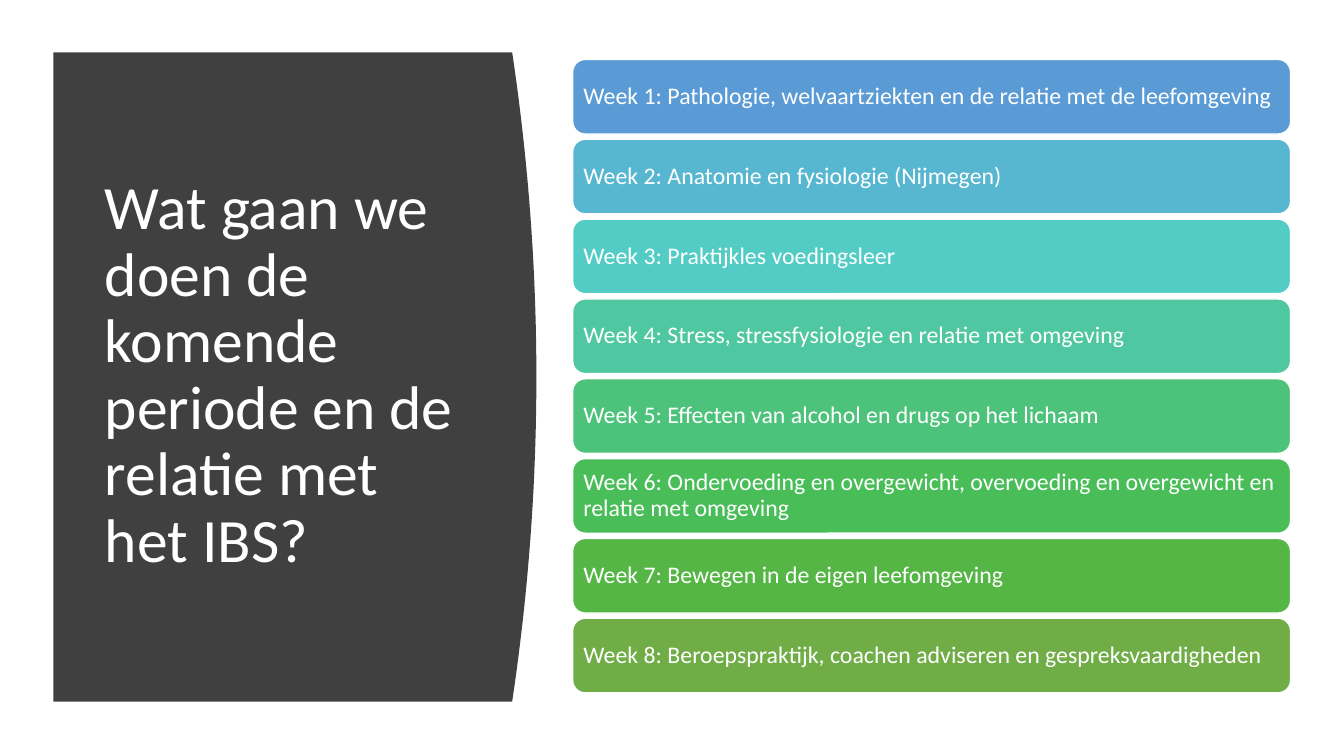
from pptx import Presentation
from pptx.dml.color import RGBColor
from pptx.enum.shapes import MSO_SHAPE
from pptx.enum.text import MSO_ANCHOR, MSO_AUTO_SIZE, PP_ALIGN
from pptx.util import Inches, Pt

FONT = "Calibri"
WHITE = RGBColor(0xFF, 0xFF, 0xFF)
DARK = RGBColor(0x40, 0x40, 0x40)

TITLE = "Wat gaan we doen de komende periode en de relatie met het IBS?"
WEEKS = [
    ("Pathologie, welvaartziekten en de relatie met de leefomgeving",
     RGBColor(0x5B, 0x9B, 0xD5)),
    ("Anatomie en fysiologie (Nijmegen)", RGBColor(0x57, 0xB7, 0xD1)),
    ("Praktijkles voedingsleer", RGBColor(0x53, 0xCC, 0xC5)),
    ("Stress, stressfysiologie en relatie met omgeving",
     RGBColor(0x4F, 0xC7, 0xA0)),
    ("Effecten van alcohol en drugs op het lichaam",
     RGBColor(0x4C, 0xC2, 0x7B)),
    ("Ondervoeding en overgewicht, overvoeding en overgewicht en "
     "relatie met omgeving", RGBColor(0x48, 0xBD, 0x58)),
    ("Bewegen in de eigen leefomgeving", RGBColor(0x55, 0xB6, 0x46)),
    ("Beroepspraktijk, coachen adviseren en gespreksvaardigheden",
     RGBColor(0x70, 0xAD, 0x47)),
]

LEFT, TOP, BOTTOM = 0.53, 0.52, 6.96
EDGE, BULGE, STEPS = 5.08, 0.24, 40
BAR_TOP, BAR_STEP = 0.59, 0.792


def write(shape, text, size):
    """Put one left-aligned, vertically centred white paragraph in a shape."""
    frame = shape.text_frame
    frame.text = text
    frame.word_wrap = True
    frame.auto_size = MSO_AUTO_SIZE.NONE
    frame.vertical_anchor = MSO_ANCHOR.MIDDLE
    par = frame.paragraphs[0]
    par.alignment = PP_ALIGN.LEFT
    par.line_spacing = 0.9
    par.font.name = FONT
    par.font.size = Pt(size)
    par.font.color.rgb = WHITE


def add_panel(slide):
    """Draw the dark panel, whose right side is a shallow parabola."""
    curve = []
    for i in range(STEPS + 1):
        t = i / STEPS
        x = EDGE + BULGE * (1 - (2 * t - 1) ** 2)
        curve.append((Inches(x), Inches(TOP + t * (BOTTOM - TOP))))
    pen = slide.shapes.build_freeform(Inches(LEFT), Inches(TOP))
    pen.add_line_segments(curve + [(Inches(LEFT), Inches(BOTTOM))])
    panel = pen.convert_to_shape()
    panel.shadow.inherit = False
    panel.fill.solid()
    panel.fill.fore_color.rgb = DARK
    panel.line.fill.background()
    return panel


def set_title(slide, panel):
    title = slide.shapes.title
    title.left, title.top = Inches(0.94), Inches(1.11)
    title.width, title.height = Inches(3.74), Inches(5.24)
    write(title, TITLE, 44)
    panel._element.addnext(title._element)


def add_bar(slide, top, text, color):
    bar = slide.shapes.add_shape(
        MSO_SHAPE.ROUNDED_RECTANGLE,
        Inches(5.68), Inches(top), Inches(7.12), Inches(0.74))
    bar.shadow.inherit = False
    bar.fill.solid()
    bar.fill.fore_color.rgb = color
    bar.line.color.rgb = WHITE
    bar.line.width = Pt(1)
    frame = bar.text_frame
    frame.margin_left = frame.margin_right = Inches(0.07)
    frame.margin_top = frame.margin_bottom = Inches(0.07)
    write(bar, text, 17)


def main():
    deck = Presentation()
    deck.slide_width, deck.slide_height = Inches(13.33), Inches(7.5)
    slide = deck.slides.add_slide(deck.slide_layouts[5])
    set_title(slide, add_panel(slide))
    for i, (topic, color) in enumerate(WEEKS):
        add_bar(slide, BAR_TOP + i * BAR_STEP, f"Week {i + 1}: {topic}", color)
    deck.save("out.pptx")


if __name__ == "__main__":
    main()
